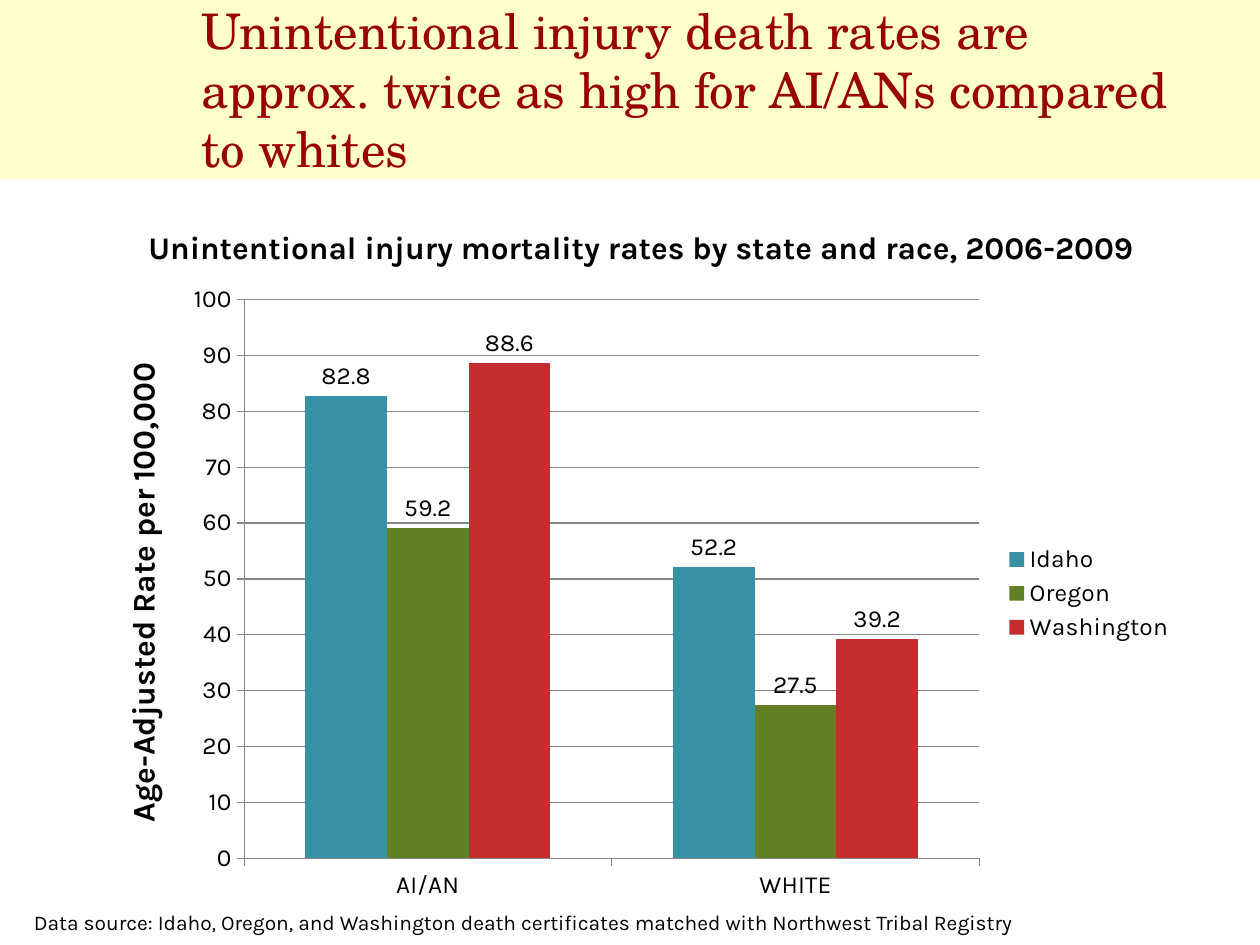
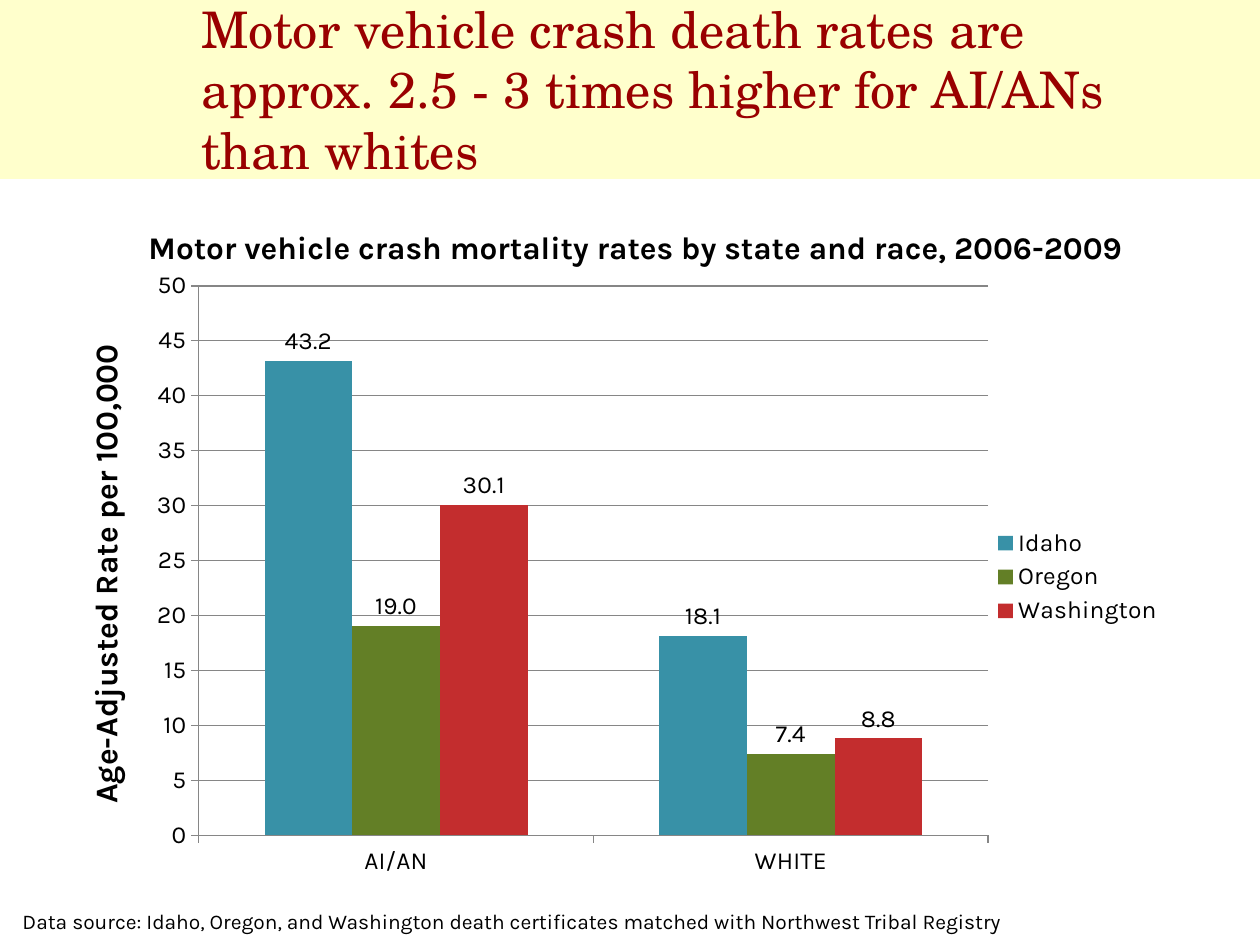
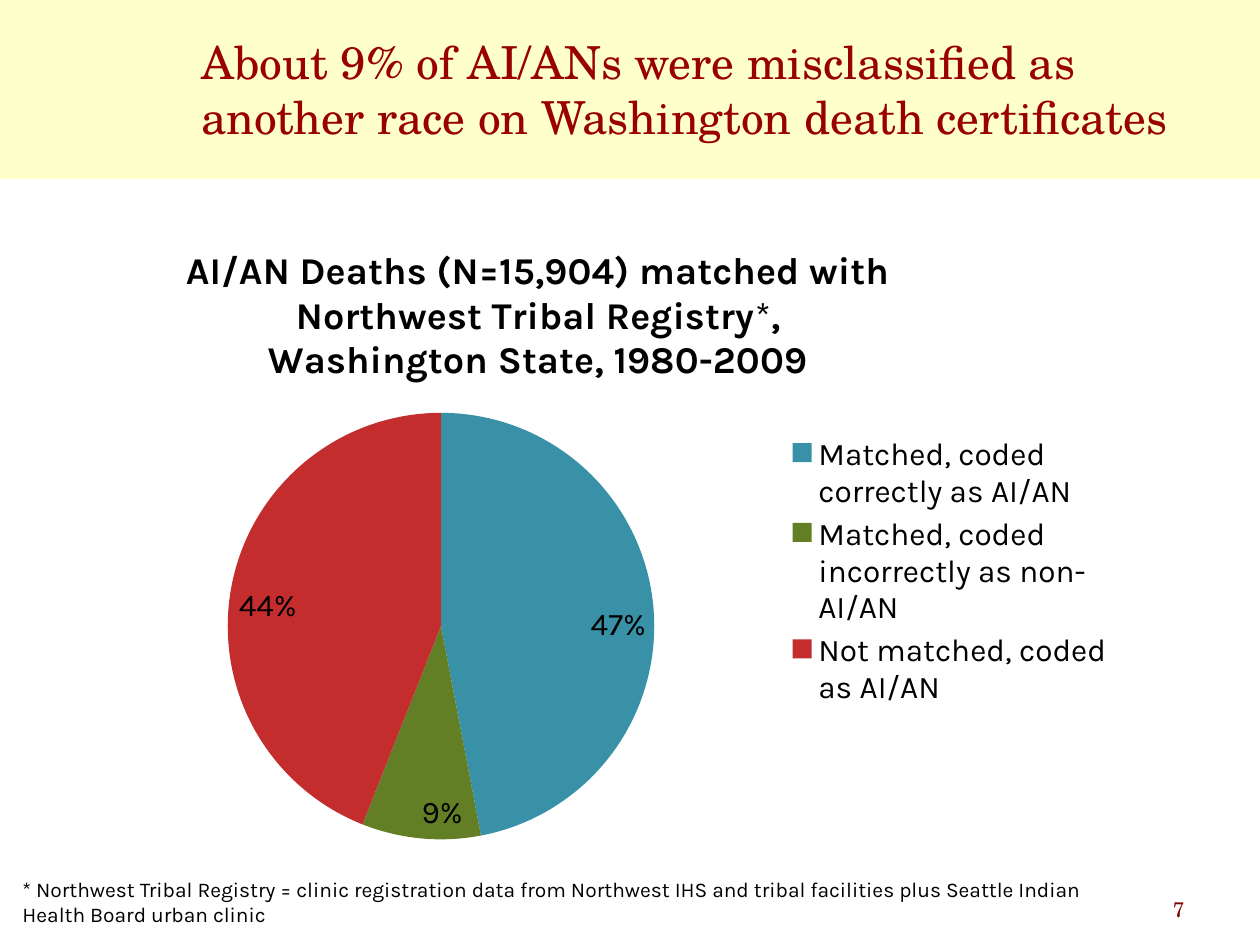
from pptx import Presentation
from pptx.chart.data import CategoryChartData as ChartData
from pptx.dml.color import RGBColor as Rgb
from pptx.enum.chart import XL_CHART_TYPE as Kind, XL_LABEL_POSITION as LabelSpot
from pptx.enum.chart import XL_LEGEND_POSITION as LegendSpot, XL_TICK_MARK as Tick
from pptx.enum.shapes import MSO_SHAPE as Shape
from pptx.enum.text import MSO_ANCHOR as Anchor, PP_ALIGN as Align
from pptx.oxml import parse_xml
from pptx.oxml.ns import nsdecls
from pptx.util import Inches, Pt

COLORS = {
    "band": "FFFFCC", "title": "990000", "number": "800000", "text": "000000",
    "grid": "868686", "idaho": "3891A7", "oregon": "637F26", "washington": "C32D2E",
}
SANS, SERIF = "Karla", "TeX Gyre Schola"
FILLS = [COLORS[name] for name in ("idaho", "oregon", "washington")]
STATES = ["Idaho", "Oregon", "Washington"]
RACES = ["AI/AN", "WHITE"]
SOURCE = ("Data source: Idaho, Oregon, and Washington death certificates "
          "matched with Northwest Tribal Registry")


def write(frame, text, color="text", align=None, **format_values):
    para = frame.paragraphs[0]
    para.alignment = align
    span = para.add_run()
    span.text = text
    for name, value in {"name": SANS, "bold": False, **format_values}.items():
        setattr(span.font, name, value)
    span.font.color.rgb = Rgb.from_string(COLORS[color])


def place(parent, index, sizes, inner=False):
    for old in parent.findall("{*}layout"):
        parent.remove(old)
    target = '<c:layoutTarget val="inner"/>' if inner else ""
    modes = "".join(f'<c:{side}Mode val="edge"/>' for side in "xy")
    values = "".join(f'<c:{side} val="{size}"/>' for side, size in zip("xywh", sizes))
    parent.insert(index, parse_xml(
        f'<c:layout {nsdecls("c")}><c:manualLayout>{target}{modes}{values}'
        "</c:manualLayout></c:layout>"))


PAGES = [
    {
        "title": "Unintentional injury death rates are approx. twice as high for "
                 "AI/ANs compared to whites",
        "title_size": 28,
        "heading": "Unintentional injury mortality rates by state and race, 2006-2009",
        "chart_at": (0.75, 2.17, 8.67, 5.08), "plot": (0.137, 0.041, 0.673, 0.873),
        "rates": [(82.8, 52.2), (59.2, 27.5), (88.6, 39.2)], "top": 100,
        "note": SOURCE, "note_at": (0.17, 7.17, 8.08, 0.3),
    },
    {
        "title": "Motor vehicle crash death rates are approx. 2.5 - 3 times higher for "
                 "AI/ANs than whites",
        "title_size": 28.8,
        "heading": "Motor vehicle crash mortality rates by state and race, 2006-2009",
        "chart_at": (0.58, 2.08, 8.75, 5), "plot": (0.114, 0.038, 0.716, 0.872),
        "rates": [(43.2, 18.1), (19.0, 7.4), (30.1, 8.8)], "top": 50,
        "note": SOURCE, "note_at": (0.08, 7.16, 8.08, 0.3),
    },
    {
        "title": "About 9% of AI/ANs were misclassified as another race on Washington "
                 "death certificates",
        "title_size": 26,
        "chart_at": (0.83, 1.82, 8.08, 5.33), "plot": (0.121, 0.273, 0.419, 0.636),
        "shares": {
            "Matched, coded correctly as AI/AN": 0.47,
            "Matched, coded incorrectly as non-AI/AN": 0.09,
            "Not matched, coded as AI/AN": 0.44,
        },
        "note": "* Northwest Tribal Registry = clinic registration data from Northwest IHS "
                "and tribal facilities plus Seattle Indian Health Board urban clinic",
        "note_at": (0.08, 6.91, 8.75, 0.5), "number": "7",
    },
]

deck = Presentation()
deck.slide_width, deck.slide_height = Inches(10), Inches(7.5)

for page in PAGES:
    slide = deck.slides.add_slide(deck.slide_layouts[6])
    band = slide.shapes.add_shape(Shape.RECTANGLE, 0, 0, Inches(10), Inches(1.42))
    band.shadow.inherit = False
    band.fill.solid()
    band.fill.fore_color.rgb = Rgb.from_string(COLORS["band"])
    band.line.fill.background()

    is_pie = "shares" in page
    data = ChartData(number_format="0%" if is_pie else "#,##0.0")
    if is_pie:
        data.categories = list(page["shares"])
        data.add_series("Series 1", list(page["shares"].values()))
    else:
        data.categories = RACES
        for state, rates in zip(STATES, page["rates"]):
            data.add_series(state, rates)
    kind = Kind.PIE if is_pie else Kind.COLUMN_CLUSTERED
    area = map(Inches, page["chart_at"])
    chart = slide.shapes.add_chart(kind, *area, data).chart
    size = Pt(18 if is_pie else 14)
    chart.font.name, chart.font.size = SANS, size
    chart.font.color.rgb = Rgb.from_string(COLORS["text"])
    chart.has_legend = True
    chart.legend.position = LegendSpot.RIGHT
    chart.legend.include_in_layout = False
    chart.legend.font.size = size

    plot = chart.plots[0]
    plot.vary_by_categories = is_pie
    plot.has_data_labels = True
    labels = plot.data_labels
    label_values = {
        "show_value": True, "show_percentage": False, "number_format_is_linked": False,
        "number_format": "0%" if is_pie else "#,##0.0",
        "position": LabelSpot.INSIDE_END if is_pie else LabelSpot.OUTSIDE_END,
    }
    for name, value in label_values.items():
        setattr(labels, name, value)
    labels.font.size = size
    place(chart._chartSpace.chart.plotArea, 0, page["plot"], inner=True)

    if is_pie:
        parts = [plot.series[0].points[index] for index in range(len(FILLS))]
        chart.has_title = True
        frame = chart.chart_title.text_frame
        heading = {"size": Pt(21.6), "align": Align.CENTER}
        write(frame, "AI/AN Deaths (N=15,904) matched with Northwest Tribal Registry",
              bold=True, **heading)
        write(frame, "*", **heading)
        write(frame, ",", bold=True, **heading)
        last = frame.add_paragraph()
        last.alignment = Align.CENTER
        span = last.add_run()
        span.text = "Washington State, 1980-2009"
        for name, value in {"name": SANS, "size": Pt(21.6), "bold": True}.items():
            setattr(span.font, name, value)
        span.font.color.rgb = Rgb.from_string(COLORS["text"])
        place(chart.chart_title._element, 1, (0.076, 0.02))
        place(chart.legend._element, 1, (0.665, 0.3, 0.33, 0.42))
    else:
        parts = plot.series
        chart.has_title = False
        plot.gap_width, plot.overlap = 150, 0
        rate_axis = chart.value_axis
        axis_values = {
            "minimum_scale": 0, "maximum_scale": page["top"],
            "major_unit": page["top"] / 10, "has_major_gridlines": True,
        }
        for name, value in axis_values.items():
            setattr(rate_axis, name, value)
        rate_axis.tick_labels.number_format = "0"
        rate_axis.tick_labels.number_format_is_linked = False
        frame = rate_axis.axis_title.text_frame
        write(frame, "Age-Adjusted Rate per 100,000", size=Pt(18), bold=True)
        frame._txBody.bodyPr.set("rot", "-5400000")
        for axis in (rate_axis, chart.category_axis):
            axis.major_tick_mark, axis.minor_tick_mark = Tick.OUTSIDE, Tick.NONE
            axis.tick_labels.font.size = size
        for line in (rate_axis.format.line, chart.category_axis.format.line,
                     rate_axis.major_gridlines.format.line):
            line.color.rgb = Rgb.from_string(COLORS["grid"])
            line.width = Pt(0.75)

    for part, color in zip(parts, FILLS):
        part.format.fill.solid()
        part.format.fill.fore_color.rgb = Rgb.from_string(color)

    texts = [
        (page["title"], (1.5, 0.08, 8, 1.25), Anchor.MIDDLE,
         {"name": SERIF, "size": Pt(page["title_size"]), "color": "title"}),
        (page["note"], page["note_at"], Anchor.TOP, {"size": Pt(12)}),
    ]
    if "heading" in page:
        texts.append((page["heading"], (1.08, 1.76, 8.08, 0.4), Anchor.TOP,
                      {"size": Pt(18), "bold": True}))
    if "number" in page:
        texts.append((page["number"], (7.17, 7.07, 2.33, 0.43), Anchor.TOP,
                      {"name": SERIF, "size": Pt(12), "color": "number",
                       "align": Align.RIGHT}))
    for text, position, anchor, format_values in texts:
        box = slide.shapes.add_textbox(*map(Inches, position))
        box.text_frame.word_wrap = True
        box.text_frame.vertical_anchor = anchor
        write(box.text_frame, text, **format_values)

deck.save("out.pptx")
